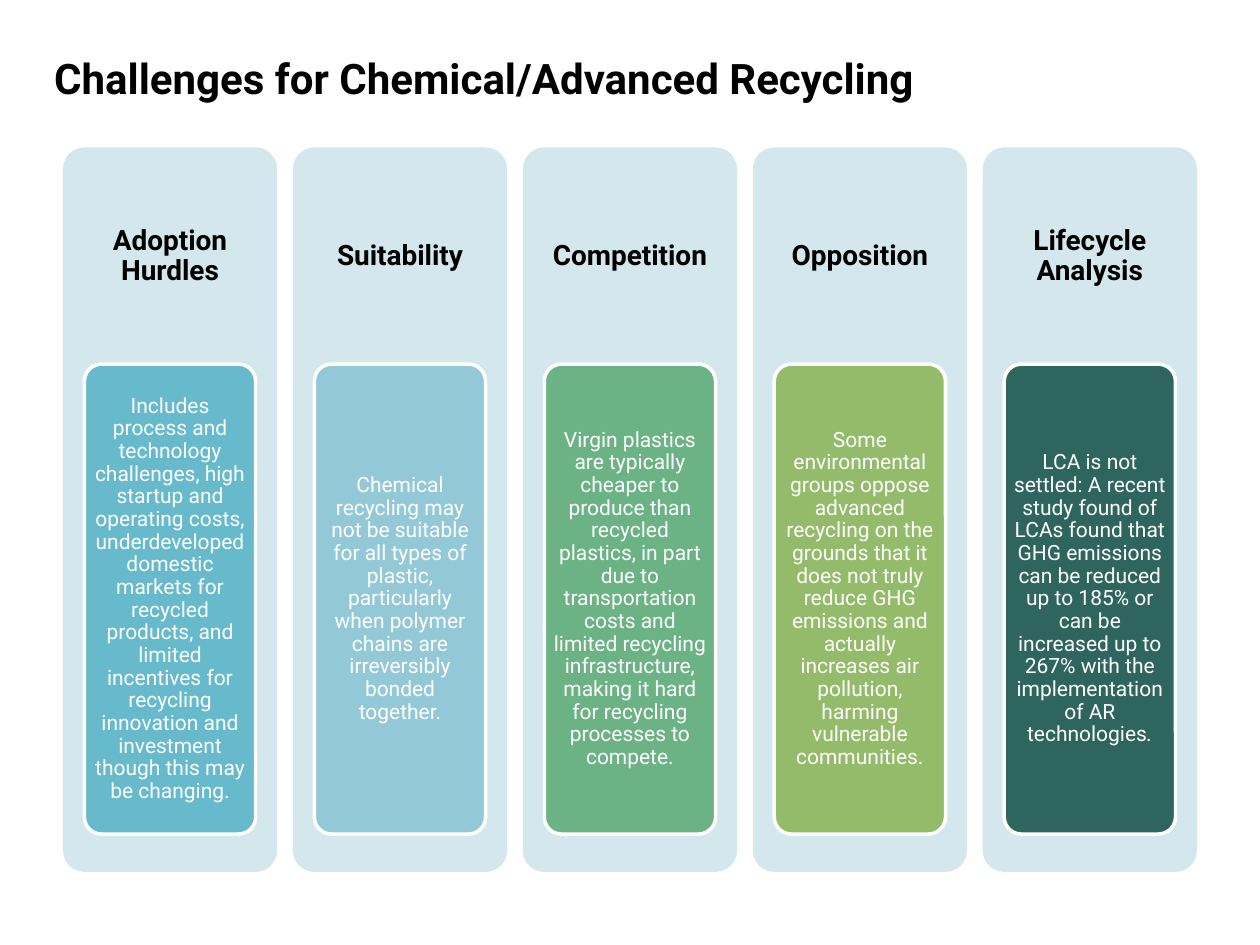
from dataclasses import dataclass

from pptx import Presentation
from pptx.dml.color import RGBColor
from pptx.enum.shapes import MSO_SHAPE
from pptx.enum.text import MSO_ANCHOR, PP_ALIGN
from pptx.util import Inches, Pt


@dataclass(frozen=True)
class Theme:
    font: str = "Roboto"
    dark: str = "000000"
    light: str = "FFFFFF"
    column: str = "D3E7EC"
    title_size: int = 24
    heading_size: int = 16
    body_size: int = 12


@dataclass(frozen=True)
class Challenge:
    heading: str
    detail: str
    color: str
    italic_end: str = ""


THEME = Theme()

CHALLENGES = [
    Challenge(
        "Adoption Hurdles",
        "Includes process and technology challenges, high startup and operating "
        "costs, underdeveloped domestic markets for recycled products, and limited "
        "incentives for recycling innovation and investment though this may be "
        "changing.",
        "67BACB",
    ),
    Challenge(
        "Suitability",
        "Chemical recycling may not be suitable for all types of plastic, "
        "particularly when polymer chains are irreversibly bonded together.",
        "93C9D6",
    ),
    Challenge(
        "Competition",
        "Virgin plastics are typically cheaper to produce than recycled plastics, "
        "in part due to transportation costs and limited recycling infrastructure, "
        "making it hard for recycling processes to compete.",
        "6BB284",
    ),
    Challenge(
        "Opposition",
        "Some environmental groups oppose advanced recycling on the grounds that it "
        "does not truly reduce GHG emissions and actually increases air pollution, "
        "harming vulnerable communities.",
        "93BB69",
    ),
    Challenge(
        "Lifecycle Analysis",
        "LCA is not settled: A recent study found of LCAs found that GHG emissions "
        "can be reduced up to 185% or can be increased up to 267% with the "
        "implementation of AR technologies",
        "2E655F",
        italic_end=".",
    ),
]

# Column grid, in inches
FIRST_LEFT, COLUMN_PITCH = 0.5, 1.825
COLUMN_TOP, COLUMN_WIDTH, COLUMN_HEIGHT = 1.17, 1.7, 5.75
HEADING_HEIGHT = 1.73
CARD_INDENT, CARD_TOP, CARD_WIDTH, CARD_HEIGHT = 0.17, 2.89, 1.36, 3.73
CARD_PADDING = 0.04


def style_font(font, size, color, bold=False):
    font.name = THEME.font
    font.size = Pt(size)
    font.bold = bold
    font.color.rgb = RGBColor.from_string(color)


def add_title(slide, text):
    title = slide.shapes.title
    title.left, title.top = Inches(0.33), Inches(0.18)
    title.width, title.height = Inches(9.52), Inches(0.87)
    frame = title.text_frame
    frame.text = text
    frame.vertical_anchor = MSO_ANCHOR.MIDDLE
    frame.paragraphs[0].alignment = PP_ALIGN.LEFT
    style_font(frame.paragraphs[0].runs[0].font, THEME.title_size, THEME.dark, bold=True)


def add_panel(slide, left, top, width, height, fill, outline=None):
    panel = slide.shapes.add_shape(
        MSO_SHAPE.ROUNDED_RECTANGLE,
        Inches(left), Inches(top), Inches(width), Inches(height),
    )
    panel.adjustments[0] = 0.1
    panel.shadow.inherit = False
    panel.fill.solid()
    panel.fill.fore_color.rgb = RGBColor.from_string(fill)
    if outline:
        panel.line.color.rgb = RGBColor.from_string(outline)
        panel.line.width = Pt(2)
    else:
        panel.line.fill.background()


def add_label(slide, left, top, width, height, text, size, color, inset, bold=False):
    """Add centred text and return its paragraph."""
    label = slide.shapes.add_textbox(
        Inches(left), Inches(top), Inches(width), Inches(height)
    )
    frame = label.text_frame
    frame.word_wrap = True
    frame.vertical_anchor = MSO_ANCHOR.MIDDLE
    frame.margin_left = frame.margin_right = Inches(inset)
    frame.margin_top = frame.margin_bottom = Inches(inset)
    frame.text = text
    paragraph = frame.paragraphs[0]
    paragraph.alignment = PP_ALIGN.CENTER
    paragraph.line_spacing = 0.9
    style_font(paragraph.runs[0].font, size, color, bold)
    return paragraph


def add_challenge(slide, left, challenge):
    # Column with its heading
    add_panel(slide, left, COLUMN_TOP, COLUMN_WIDTH, COLUMN_HEIGHT, THEME.column)
    add_label(slide, left, COLUMN_TOP, COLUMN_WIDTH, HEADING_HEIGHT,
              challenge.heading, THEME.heading_size, THEME.dark, inset=0.07, bold=True)

    # Coloured card with the detail
    card_left = left + CARD_INDENT
    add_panel(slide, card_left, CARD_TOP, CARD_WIDTH, CARD_HEIGHT,
              challenge.color, outline=THEME.light)
    detail = add_label(slide, card_left + CARD_PADDING, CARD_TOP + CARD_PADDING,
                       CARD_WIDTH - 2 * CARD_PADDING, CARD_HEIGHT - 2 * CARD_PADDING,
                       challenge.detail, THEME.body_size, THEME.light, inset=0.03)
    if challenge.italic_end:
        ending = detail.add_run()
        ending.text = challenge.italic_end
        style_font(ending.font, THEME.body_size, THEME.light)
        ending.font.italic = True


def main():
    presentation = Presentation()
    presentation.slide_width = Inches(10)
    presentation.slide_height = Inches(7.5)
    slide = presentation.slides.add_slide(presentation.slide_layouts[5])

    add_title(slide, "Challenges for Chemical/Advanced Recycling")
    for index, challenge in enumerate(CHALLENGES):
        add_challenge(slide, FIRST_LEFT + index * COLUMN_PITCH, challenge)

    presentation.save("out.pptx")


if __name__ == "__main__":
    main()
